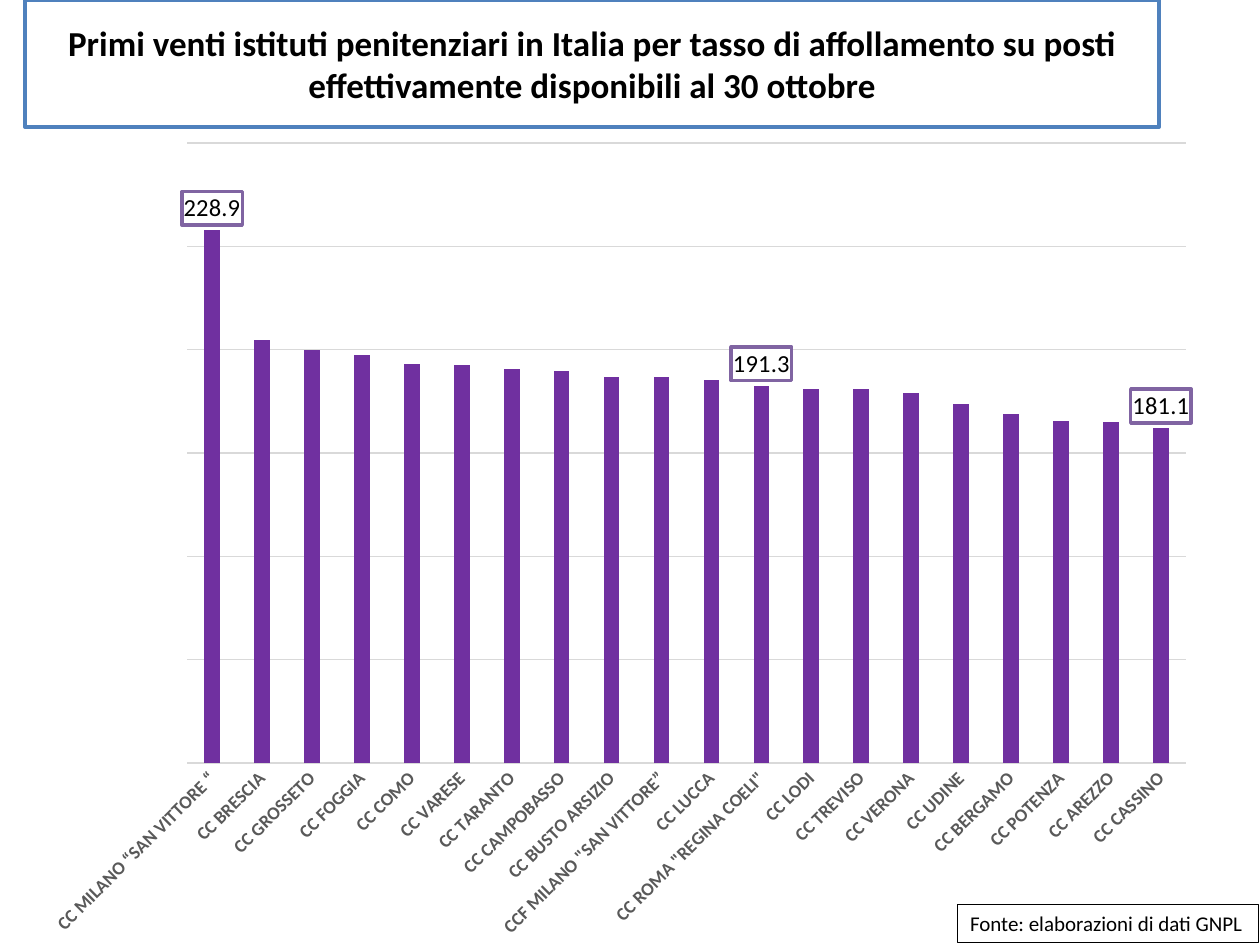
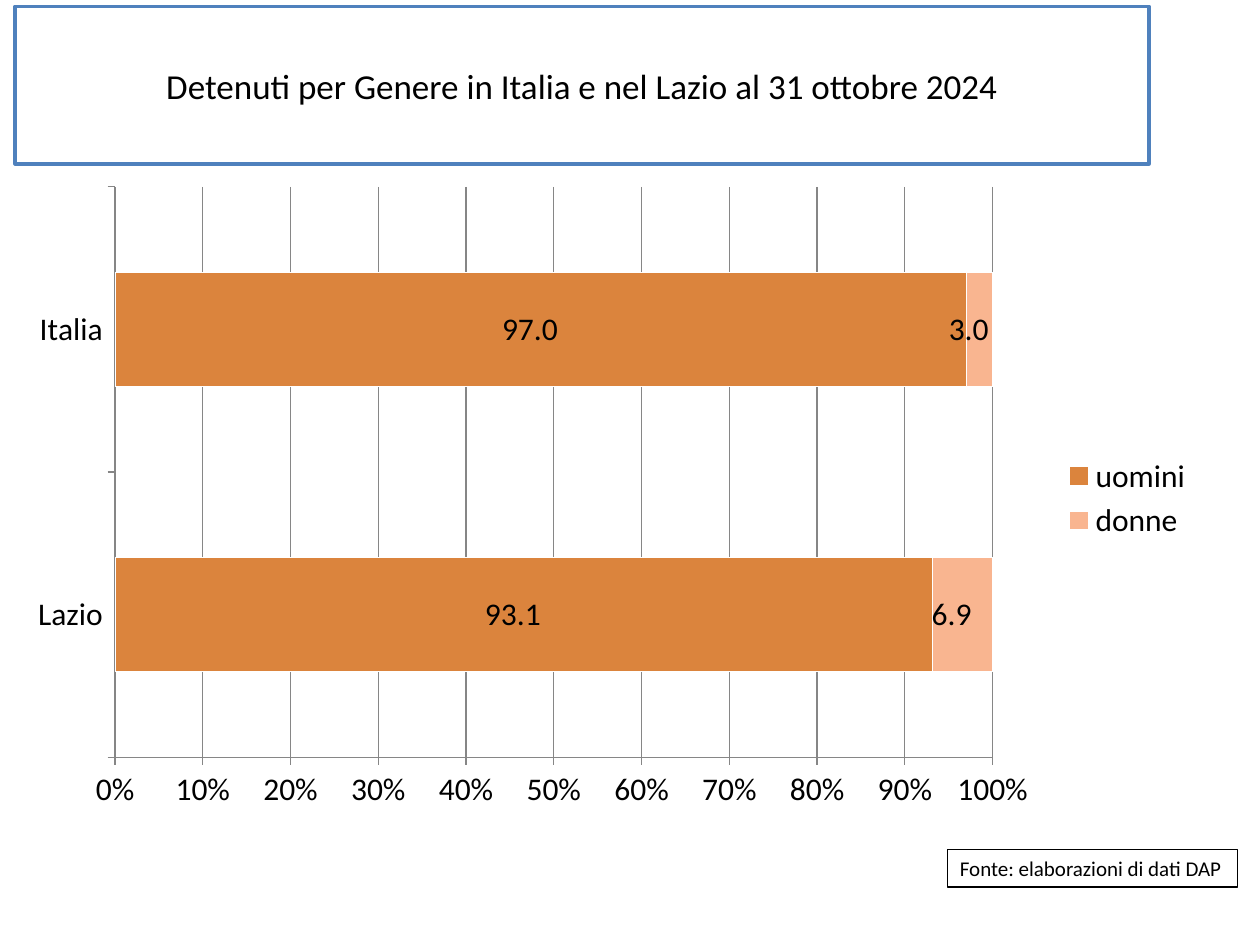
"""Build two slides on prison crowding and on the gender of detainees."""
from dataclasses import dataclass
from lxml.etree import SubElement
from pptx import Presentation
from pptx.chart.data import CategoryChartData
from pptx.dml.color import RGBColor
from pptx.enum.chart import XL_CHART_TYPE, XL_LABEL_POSITION, XL_LEGEND_POSITION, XL_TICK_LABEL_POSITION, XL_TICK_MARK
from pptx.enum.shapes import MSO_SHAPE
from pptx.enum.text import MSO_ANCHOR, PP_ALIGN
from pptx.oxml import parse_xml
from pptx.oxml.ns import nsdecls, qn
from pptx.util import Inches, Pt


@dataclass(frozen=True)
class Theme:
    font: str = "Calibri"
    black: RGBColor = RGBColor(0, 0, 0)
    white: RGBColor = RGBColor(255, 255, 255)
    title_border: RGBColor = RGBColor(0x4F, 0x81, 0xBD)
    column: RGBColor = RGBColor(0x70, 0x30, 0xA0)
    label_border: RGBColor = RGBColor(0x80, 0x64, 0xA2)
    pale_grid: RGBColor = RGBColor(0xD9, 0xD9, 0xD9)
    dark_grid: RGBColor = RGBColor(0x86, 0x86, 0x86)
    category_text: RGBColor = RGBColor(0x59, 0x59, 0x59)
    men: RGBColor = RGBColor(0xDB, 0x84, 0x3D)
    women: RGBColor = RGBColor(0xF9, 0xB5, 0x90)
    title_size: Pt = Pt(20)
    source_size: Pt = Pt(12)
    category_size: Pt = Pt(10.5)
    label_size: Pt = Pt(14)
    chart_size: Pt = Pt(18)


theme = Theme()


def add_box(page, text, place, border, width, size, bold=False, title=False):
    box = page.shapes.add_shape(MSO_SHAPE.RECTANGLE, *map(Inches, place))
    box.shadow.inherit = False
    box.fill.solid()
    box.fill.fore_color.rgb = theme.white
    box.line.color.rgb = border
    box.line.width = Pt(width)
    frame = box.text_frame
    frame.word_wrap = title
    frame.vertical_anchor = MSO_ANCHOR.MIDDLE if title else MSO_ANCHOR.TOP
    para = frame.paragraphs[0]
    para.text = text
    para.alignment = PP_ALIGN.CENTER if title else PP_ALIGN.LEFT
    para.font.name, para.font.size, para.font.bold = theme.font, size, bold
    para.font.color.rgb = theme.black


def add_plot(page, kind, data, place, inner, grid):
    chart = page.shapes.add_chart(kind, *map(Inches, place), data).chart
    chart.has_title = False
    chart.has_legend = False
    chart.font.name, chart.font.size = theme.font, theme.chart_size
    chart.font.color.rgb = theme.black
    area = chart.element.xpath(".//c:plotArea")[0]
    for old in area.xpath("c:layout"):
        area.remove(old)
    layout = parse_xml(f"<c:layout {nsdecls('c')}/>")
    manual = SubElement(layout, qn("c:manualLayout"))
    settings = [("layoutTarget", "inner"), ("xMode", "edge"), ("yMode", "edge"), *zip("xywh", inner)]
    for name, value in settings:
        SubElement(manual, qn(f"c:{name}")).set("val", str(value))
    area.insert(0, layout)
    chart.plots[0].vary_by_categories = False
    chart.value_axis.has_major_gridlines = True
    for line in (chart.value_axis.major_gridlines.format.line, chart.value_axis.format.line,
                 chart.category_axis.format.line):
        line.color.rgb = grid
        line.width = Pt(0.75)
    return chart


deck = Presentation()
deck.slide_width, deck.slide_height = Inches(10), Inches(7.5)
blank = deck.slide_layouts[6]

crowding_page = deck.slides.add_slide(blank)
add_box(crowding_page, "Primi venti istituti penitenziari in Italia per tasso di affollamento su posti "
        "effettivamente disponibili al 30 ottobre", (0.2, 0, 9, 1.01),
        theme.title_border, 2, theme.title_size, bold=True, title=True)
crowding = {
    "CC MILANO “SAN VITTORE “": 228.9, "CC BRESCIA": 202.2, "CC GROSSETO": 200, "CC FOGGIA": 198.6,
    "CC COMO": 196.4, "CC VARESE": 196.2, "CC TARANTO": 195.3, "CC CAMPOBASSO": 194.7,
    "CC BUSTO ARSIZIO": 193.3, 'CCF MILANO "SAN VITTORE”': 193.3, "CC LUCCA": 192.7,
    'CC ROMA "REGINA COELI"': 191.3, "CC LODI": 190.5, "CC TREVISO": 190.5, "CC VERONA": 189.6,
    "CC UDINE": 186.8, "CC BERGAMO": 184.3, "CC POTENZA": 182.7, "CC AREZZO": 182.6, "CC CASSINO": 181.1,
}
crowding_data = CategoryChartData(number_format="0.0")
crowding_data.categories = list(crowding)
crowding_data.add_series("Tasso di affollamento", list(crowding.values()))
chart = add_plot(crowding_page, XL_CHART_TYPE.COLUMN_CLUSTERED, crowding_data,
                 (0.23, 1.01, 9.37, 6.57), (0.134, 0.019, 0.846, 0.749), theme.pale_grid)
chart.plots[0].gap_width, chart.plots[0].overlap = 219, -27
rates = chart.value_axis
rates.minimum_scale, rates.maximum_scale, rates.major_unit = 100, 250, 25
rates.visible = False
prisons = chart.category_axis
prisons.major_tick_mark = XL_TICK_MARK.NONE
prison_font = prisons.tick_labels.font
prison_font.name, prison_font.size, prison_font.bold = theme.font, theme.category_size, True
prison_font.color.rgb = theme.category_text
chart.element.xpath(".//c:catAx/c:txPr/a:bodyPr")[0].set("rot", "-2700000")
columns = chart.series[0]
columns.format.fill.solid()
columns.format.fill.fore_color.rgb = theme.column
for index in (0, 11, 19):
    label = columns.points[index].data_label
    label.font.size, label.font.name = theme.label_size, theme.font
    label.font.color.rgb = theme.black
    label.position = XL_LABEL_POSITION.OUTSIDE_END
for label in chart.element.xpath(".//c:dLbl"):
    label.insert(1, parse_xml(f'<c:numFmt {nsdecls("c")} formatCode="0.0" sourceLinked="0"/>'))
    for old in label.xpath("c:spPr"):
        label.remove(old)
    label.insert(2, parse_xml(
        f'<c:spPr {nsdecls("c", "a")}><a:solidFill><a:srgbClr val="{theme.white}"/></a:solidFill>'
        f'<a:ln w="{Pt(2)}"><a:solidFill><a:srgbClr val="{theme.label_border}"/></a:solidFill></a:ln></c:spPr>'))
add_box(crowding_page, "Fonte: elaborazioni di dati GNPL", (7.6, 7.18, 2.39, 0.3),
        theme.black, 0.75, theme.source_size)

gender_page = deck.slides.add_slide(blank)
add_box(gender_page, "Detenuti per Genere in Italia e nel Lazio al 31 ottobre 2024", (0.12, 0.05, 9, 1.25),
        theme.title_border, 2, theme.title_size, title=True)
gender_data = CategoryChartData(number_format="0.0")
gender_data.categories = ["Lazio", "Italia"]
gender_data.add_series("uomini", (93.1, 97.0))
gender_data.add_series("donne", (6.9, 3.0))
chart = add_plot(gender_page, XL_CHART_TYPE.BAR_STACKED_100, gender_data,
                 (0.12, 1.39, 9.45, 5.13), (0.084, 0.018, 0.737, 0.883), theme.dark_grid)
chart.plots[0].gap_width, chart.plots[0].overlap = 150, 100
shares = chart.value_axis
shares.minimum_scale, shares.maximum_scale, shares.major_unit = 0, 1, 0.1
shares.major_tick_mark = XL_TICK_MARK.OUTSIDE
shares.tick_labels.number_format = "0%"
shares.tick_labels.number_format_is_linked = False
chart.category_axis.major_tick_mark = XL_TICK_MARK.OUTSIDE
chart.category_axis.tick_label_position = XL_TICK_LABEL_POSITION.LOW
for bars, color in zip(chart.series, (theme.men, theme.women)):
    bars.format.fill.solid()
    bars.format.fill.fore_color.rgb = color
    bars.format.line.color.rgb = theme.white
    labels = bars.data_labels
    labels.show_value = True
    labels.position = XL_LABEL_POSITION.CENTER
    labels.number_format = r'_-* #,##0.0\ _€_-;\-* #,##0.0\ _€_-;_-* "-"??\ _€_-;_-@_-'
    labels.number_format_is_linked = False
chart.has_legend = True
chart.legend.position = XL_LEGEND_POSITION.RIGHT
chart.legend.include_in_layout = False
add_box(gender_page, "Fonte: elaborazioni di dati DAP", (7.52, 6.74, 2.3, 0.3),
        theme.black, 0.75, theme.source_size)

deck.save("out.pptx")
